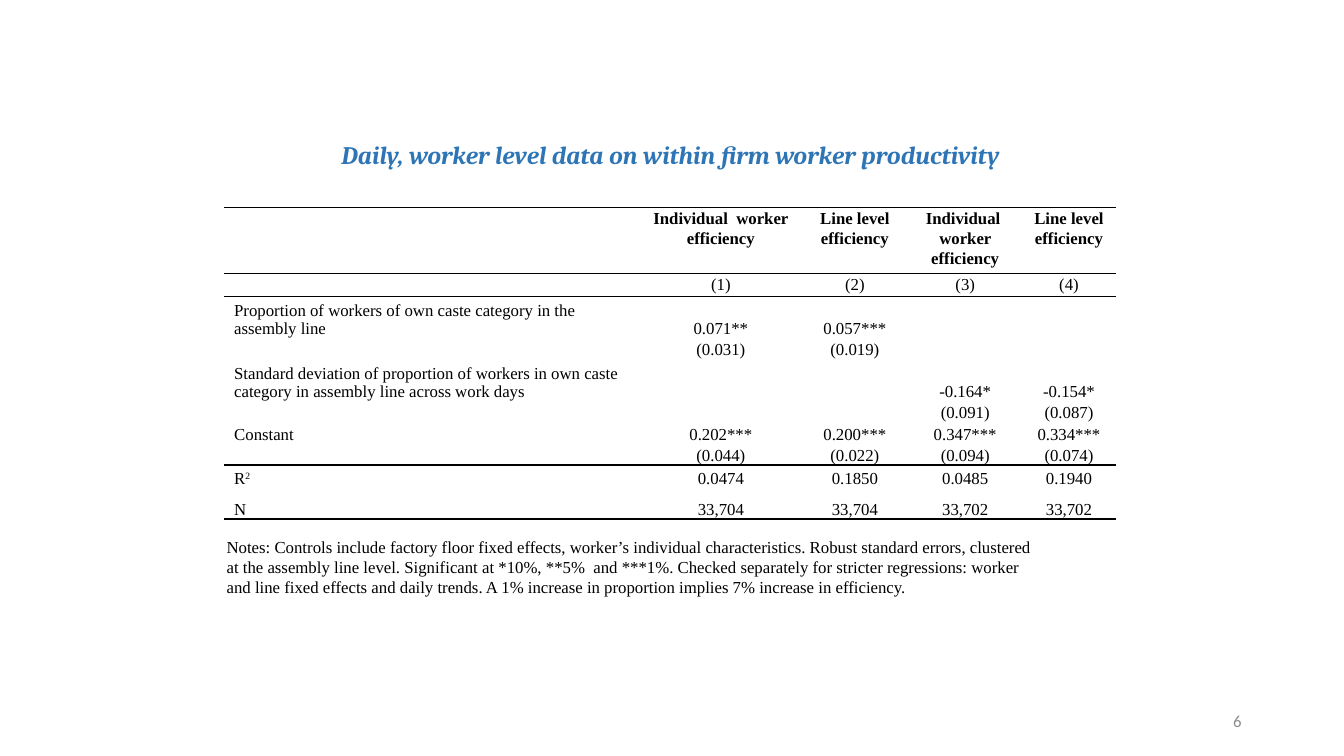
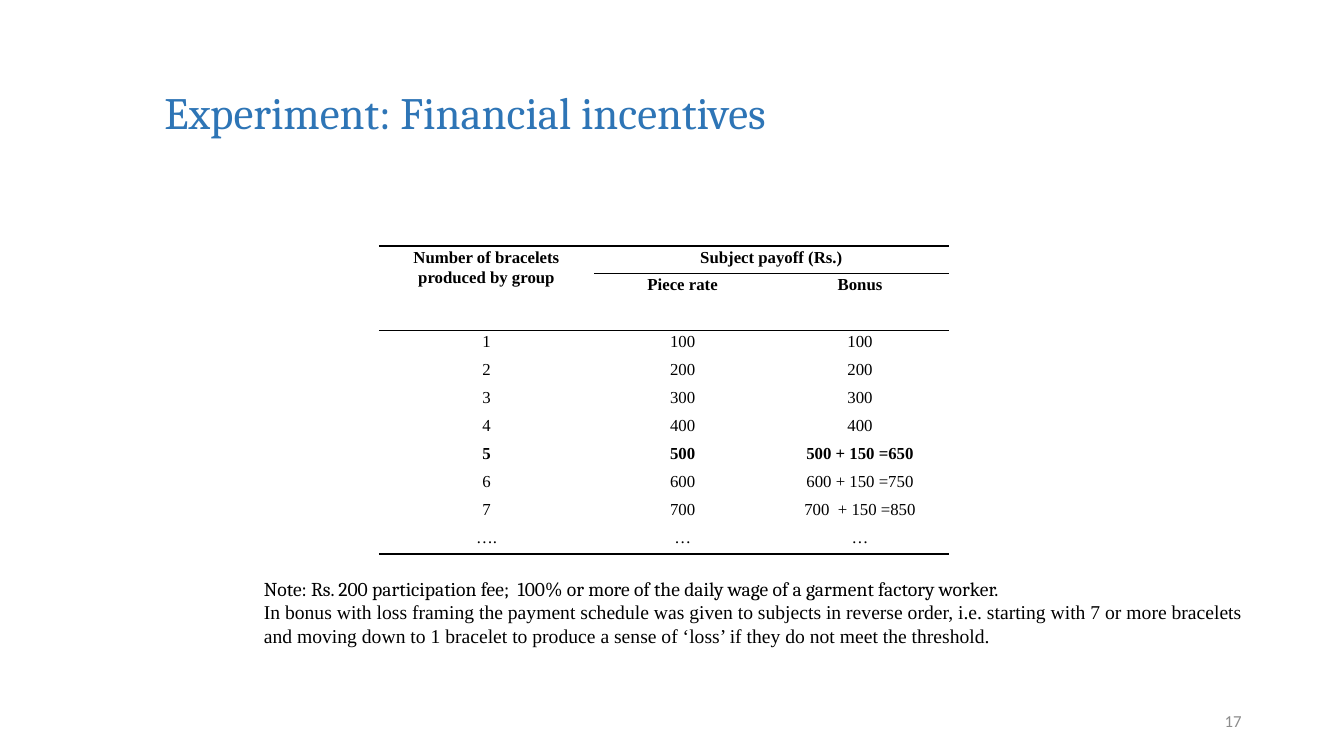
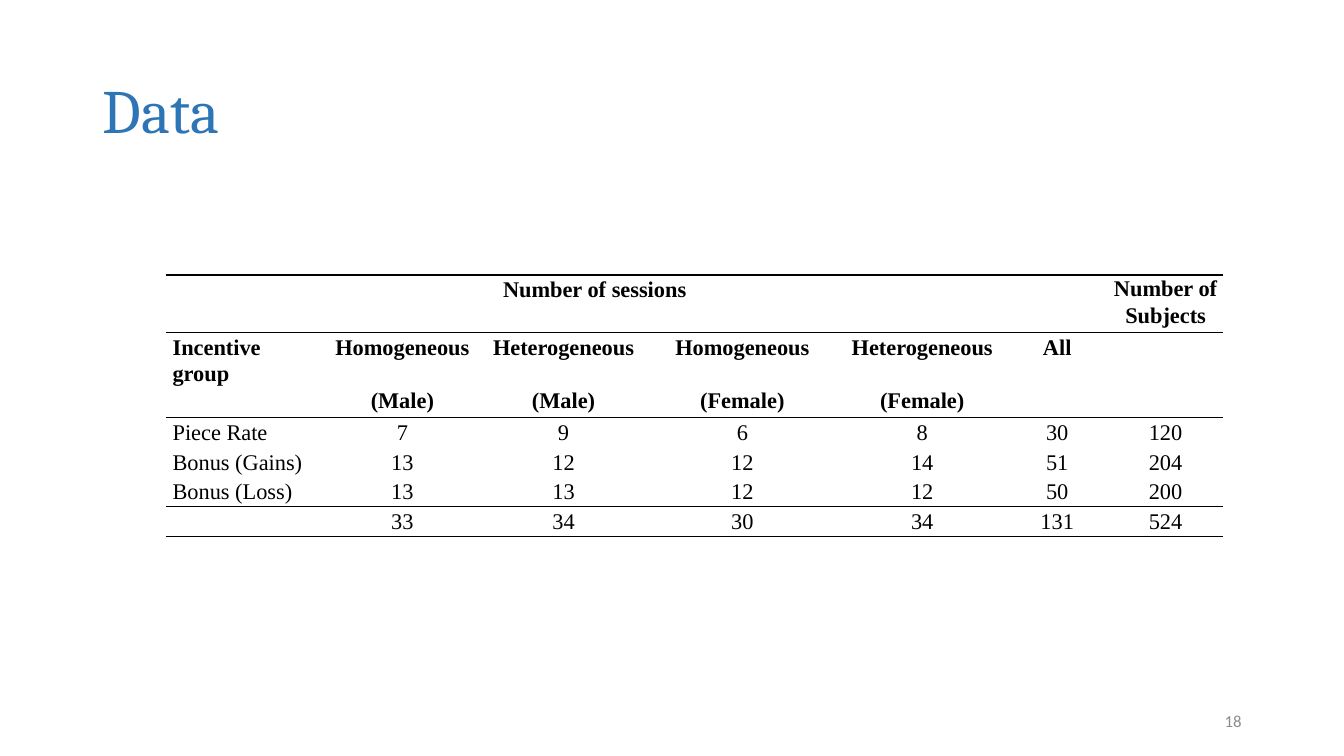
from dataclasses import dataclass, field

from lxml import etree
from pptx import Presentation
from pptx.dml.color import RGBColor
from pptx.enum.text import MSO_ANCHOR, MSO_AUTO_SIZE, PP_ALIGN
from pptx.oxml.ns import qn
from pptx.util import Pt

LEFT, CENTER, RIGHT = PP_ALIGN.LEFT, PP_ALIGN.CENTER, PP_ALIGN.RIGHT
TOP, MIDDLE, BOTTOM = MSO_ANCHOR.TOP, MSO_ANCHOR.MIDDLE, MSO_ANCHOR.BOTTOM
NO_AUTOFIT = MSO_AUTO_SIZE.NONE

BLUE = RGBColor(0x2E, 0x75, 0xB6)
BLACK = RGBColor(0, 0, 0)
GRAY = RGBColor(0x8C, 0x8C, 0x8C)
HEADING_FONT, TEXT_FONT, NUMBER_FONT = "Cambria", "Times New Roman", "Calibri"

SLIDE_SIZE = (960, 540)
TITLE_ONLY_LAYOUT = 5
NUMBER_FRAME = (678, 500.5, 216, 28.8)
LOOSE = 1.07


@dataclass
class TableLook:
    """Describe how a table's text and rules are set."""

    size: int
    rules: dict
    bold_rows: tuple
    label_align: PP_ALIGN = LEFT
    body_anchor: MSO_ANCHOR = TOP
    header_rows: int = 2
    margin: float = 5
    label_indent: float = 0
    body_spacing: float = LOOSE
    rule_gaps: set = field(default_factory=set)


PRODUCTIVITY_ROWS = [
    ["", "Individual  worker efficiency", "Line level efficiency",
     "Individual  worker efficiency", "Line level efficiency"],
    ["", "(1)", "(2)", "(3)", "(4)"],
    ["Proportion of workers of own caste category in the assembly line",
     "0.071**", "0.057***", "", ""],
    ["", "(0.031)", "(0.019)", "", ""],
    ["Standard deviation of proportion of workers in own caste "
     "category in assembly line across work days", "", "", "-0.164*", "-0.154*"],
    ["", "", "", "(0.091)", "(0.087)"],
    ["Constant", "0.202***", "0.200***", "0.347***", "0.334***"],
    ["", "(0.044)", "(0.022)", "(0.094)", "(0.074)"],
    ["R^2", "0.0474", "0.1850", "0.0485", "0.1940"],
    ["N", "33,704", "33,704", "33,702", "33,702"],
]
PRODUCTIVITY_NOTE = (
    "Notes: Controls include factory floor fixed effects, worker’s individual "
    "characteristics. Robust standard errors, clustered at the assembly line level. "
    "Significant at *10%, **5%  and ***1%. Checked separately for stricter "
    "regressions: worker and line fixed effects and daily trends. A 1% increase in "
    "proportion implies 7% increase in efficiency."
)

PAYOFF_ROWS = [
    ["Number of bracelets produced by group", "Subject payoff (Rs.)", ""],
    ["", "Piece rate", "Bonus"],
    ["1", "100", "100"],
    ["2", "200", "200"],
    ["3", "300", "300"],
    ["4", "400", "400"],
    ["5", "500", "500 + 150 =650"],
    ["6", "600", "600 + 150 =750"],
    ["7", "700", "700  + 150 =850"],
    ["….", "…", "…"],
]
PAYOFF_NOTES = [
    ("Note: Rs. 200 participation fee;  100% or more of the daily wage of a garment "
     "factory worker.", HEADING_FONT),
    ("In bonus with loss framing the payment schedule was given to subjects in "
     "reverse order, i.e. starting with 7 or more bracelets", TEXT_FONT),
    ("and moving down to 1 bracelet to produce a sense of ‘loss’ if they do not meet "
     "the threshold.", TEXT_FONT),
]

SESSION_ROWS = [
    ["Number of sessions", "", "", "", "", "", "Number of Subjects"],
    ["Incentive group", "Homogeneous\n(Male)", "Heterogeneous\n(Male)",
     "Homogeneous\n(Female)", "Heterogeneous\n(Female)", "All", ""],
    ["Piece Rate", "7", "9", "6", "8", "30", "120"],
    ["Bonus (Gains)", "13", "12", "12", "14", "51", "204"],
    ["Bonus (Loss)", "13", "13", "12", "12", "50", "200"],
    ["", "33", "34", "30", "34", "131", "524"],
]


def points(values):
    """Turn numbers into point lengths."""
    return [Pt(value) for value in values]


def add_run(para, text, font, size, color=BLACK, bold=False, italic=False):
    """Append one formatted run to a paragraph."""
    span = para.add_run()
    span.text = text
    span.font.name = font
    span.font.size = Pt(size)
    span.font.color.rgb = color
    span.font.bold = bold
    span.font.italic = italic
    return span


def add_slide(deck, title, frame, size, number, centered=False):
    """Add a slide with its title and page number."""
    page = deck.slides.add_slide(deck.slide_layouts[TITLE_ONLY_LAYOUT])
    box = page.shapes.title
    box.left, box.top, box.width, box.height = points(frame)
    box.text_frame.auto_size = NO_AUTOFIT
    box.text_frame.word_wrap = not centered
    box.text_frame.vertical_anchor = MIDDLE
    para = box.text_frame.paragraphs[0]
    para.alignment = CENTER if centered else LEFT
    para.line_spacing = 0.9
    add_run(para, title, HEADING_FONT, size, BLUE, bold=centered, italic=centered)
    add_text(page, NUMBER_FRAME, [(str(number), NUMBER_FONT)], 12, GRAY, RIGHT, MIDDLE)
    return page


def add_text(page, frame, lines, size, color=BLACK, align=LEFT, anchor=TOP):
    """Add a text box with one paragraph for each (text, font) pair."""
    box = page.shapes.add_textbox(*points(frame)).text_frame
    box.word_wrap = True
    box.vertical_anchor = anchor
    for index, (text, font) in enumerate(lines):
        para = box.add_paragraph() if index else box.paragraphs[0]
        para.alignment = align
        add_run(para, text, font, size, color)


def set_border(cell, side, width):
    """Draw one cell border, or clear it when the width is zero."""
    line = etree.SubElement(cell._tc.get_or_add_tcPr(), qn("a:" + side))
    line.set("w", str(Pt(width)))
    if not width:
        etree.SubElement(line, qn("a:noFill"))
        return
    fill = etree.SubElement(line, qn("a:solidFill"))
    etree.SubElement(fill, qn("a:srgbClr")).set("val", str(BLACK))


def set_borders(cell, row, column, look):
    """Apply the table's horizontal rules to a cell."""
    def rule(line):
        return 0 if (line, column) in look.rule_gaps else look.rules.get(line, 0)

    height = cell.span_height if cell.is_merge_origin else 1
    widths = {"lnL": 0, "lnR": 0, "lnT": rule(row), "lnB": rule(row + height)}
    for side, width in widths.items():
        set_border(cell, side, width)


def set_indent(para, indent):
    """Indent a whole paragraph from the left."""
    properties = para._p.get_or_add_pPr()
    properties.set("marL", str(Pt(indent)))
    properties.set("indent", "0")


def fill_cell(cell, text, row, column, look):
    """Write a cell's text, where ^ starts a superscript."""
    in_header = row < look.header_rows
    cell.margin_left = cell.margin_right = Pt(look.margin)
    cell.margin_top, cell.margin_bottom = Pt(0.7), Pt(0)
    cell.vertical_anchor = TOP if in_header else look.body_anchor
    for index, line in enumerate(text.split("\n")):
        frame = cell.text_frame
        para = frame.add_paragraph() if index else frame.paragraphs[0]
        para.alignment = CENTER if column else look.label_align
        para.line_spacing = LOOSE if in_header else look.body_spacing
        if index:
            para.space_before = Pt(19)
        if not column and look.label_indent:
            set_indent(para, look.label_indent)
        base, _, raised = line.partition("^")
        if base:
            add_run(para, base, TEXT_FONT, look.size, bold=row in look.bold_rows)
        else:
            end = etree.SubElement(para._p, qn("a:endParaRPr"))
            end.set("sz", str(look.size * 100))
        if raised:
            span = add_run(para, raised, TEXT_FONT, look.size)
            span._r.get_or_add_rPr().set("baseline", "30000")


def add_table(page, origin, widths, heights, rows, look, merges=()):
    """Add a ruled table without fills."""
    frame = (*origin, sum(widths), sum(heights))
    table = page.shapes.add_table(len(rows), len(widths), *points(frame)).table
    table.first_row = table.horz_banding = False
    for column, width in zip(table.columns, widths):
        column.width = Pt(width)
    for row, height in zip(table.rows, heights):
        row.height = Pt(height)
    for first, last in merges:
        table.cell(*first).merge(table.cell(*last))
    for row, texts in enumerate(rows):
        for column, text in enumerate(texts):
            cell = table.cell(row, column)
            fill_cell(cell, text, row, column, look)
            set_borders(cell, row, column, look)
            cell.fill.background()
    return table


def build_productivity(deck):
    """Build the worker productivity regression slide."""
    page = add_slide(deck, "Daily, worker level data on within firm worker productivity",
                     (229, 98, 500, 27), 18, 6, centered=True)
    look = TableLook(12, {0: 1, 1: 1, 2: 1, 8: 1, 10: 1.5}, (0,), body_anchor=BOTTOM,
                     margin=0.7, label_indent=6.3, body_spacing=1)
    heights = [47, 16.5, 30, 15, 30, 15, 15, 15, 16.5, 22.3]
    add_table(page, (160.3, 148.2), [297.4, 114.5, 77, 80.6, 67.7], heights,
              PRODUCTIVITY_ROWS, look)
    add_text(page, (154.8, 379.5, 592, 65.5), [(PRODUCTIVITY_NOTE, TEXT_FONT)], 12)


def build_incentives(deck):
    """Build the payoff schedule slide."""
    page = add_slide(deck, "Experiment: Financial incentives",
                     (110.2, 30, 828, 104.4), 32, 17)
    look = TableLook(12, {0: 1.5, 1: 1, 2: 1, 10: 1.5}, (0, 1, 6), label_align=CENTER,
                     rule_gaps={(1, 0)})
    add_table(page, (270.7, 175.7), [153.6, 126.7, 126.7], [19.8, 40.6] + [20] * 8,
              PAYOFF_ROWS, look, [((0, 0), (1, 0)), ((0, 1), (0, 2))])
    add_text(page, (181.4, 408.2, 728, 58.3), PAYOFF_NOTES, 14)


def build_sessions(deck):
    """Build the session count slide."""
    page = add_slide(deck, "Data", (66.2, 28.8, 828, 104.4), 44, 18)
    look = TableLook(16, {0: 1.5, 1: 1, 2: 1, 5: 1, 6: 1.5}, (0, 1))
    widths = [113, 112.3, 118, 137.5, 119.5, 73.4, 81.4]
    table = add_table(page, (118.3, 196.5), widths, [37.9, 57.2, 19.6, 19.6, 19.6, 20.4],
                      SESSION_ROWS, look, [((0, 0), (0, 5))])
    set_indent(table.cell(0, 0).text_frame.paragraphs[0], 236)
    subjects = table.cell(0, 6)
    subjects.margin_left = subjects.margin_right = subjects.margin_top = Pt(0)


def main():
    """Build and save the deck."""
    deck = Presentation()
    deck.slide_width, deck.slide_height = points(SLIDE_SIZE)
    build_productivity(deck)
    build_incentives(deck)
    build_sessions(deck)
    deck.save("out.pptx")


if __name__ == "__main__":
    main()
